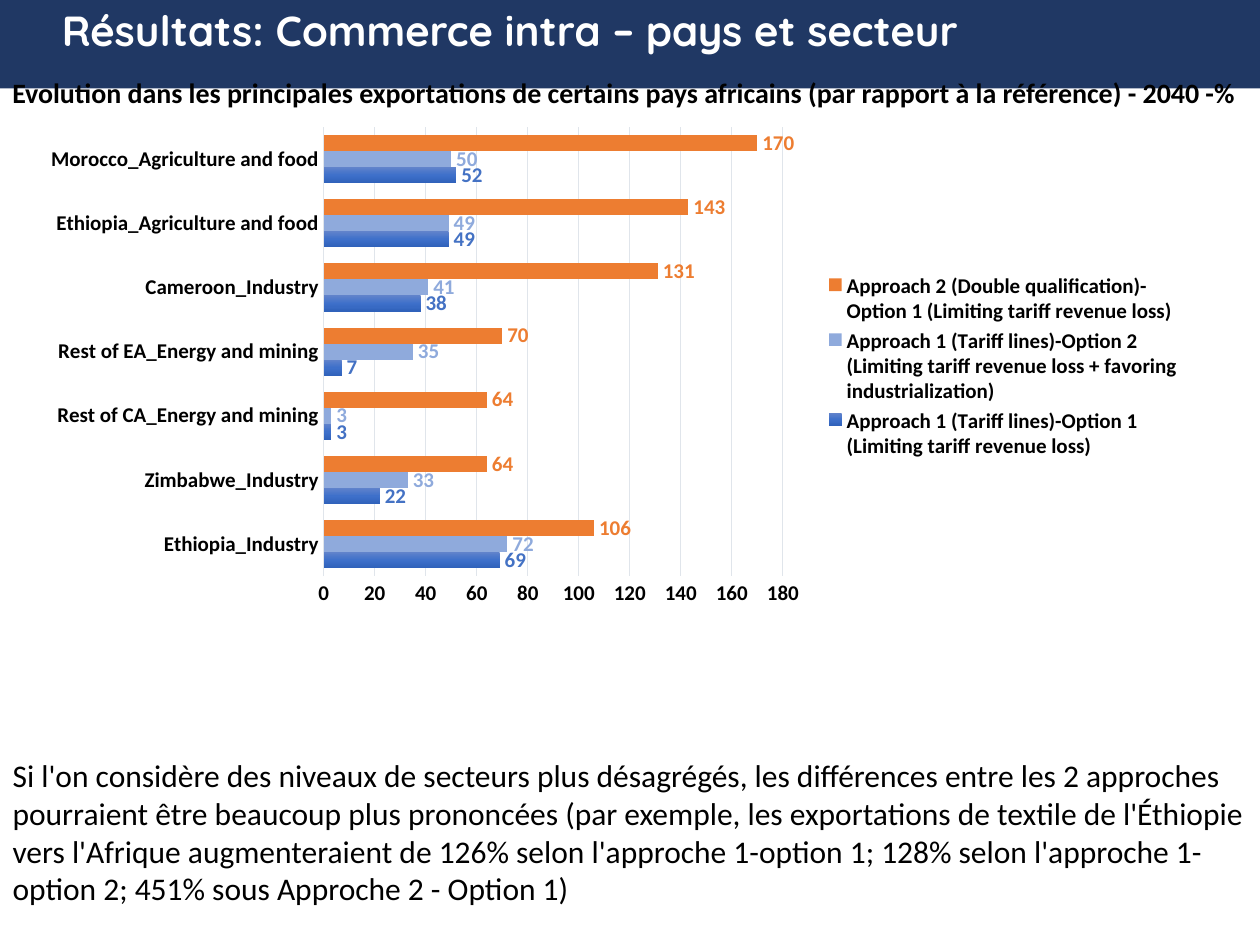
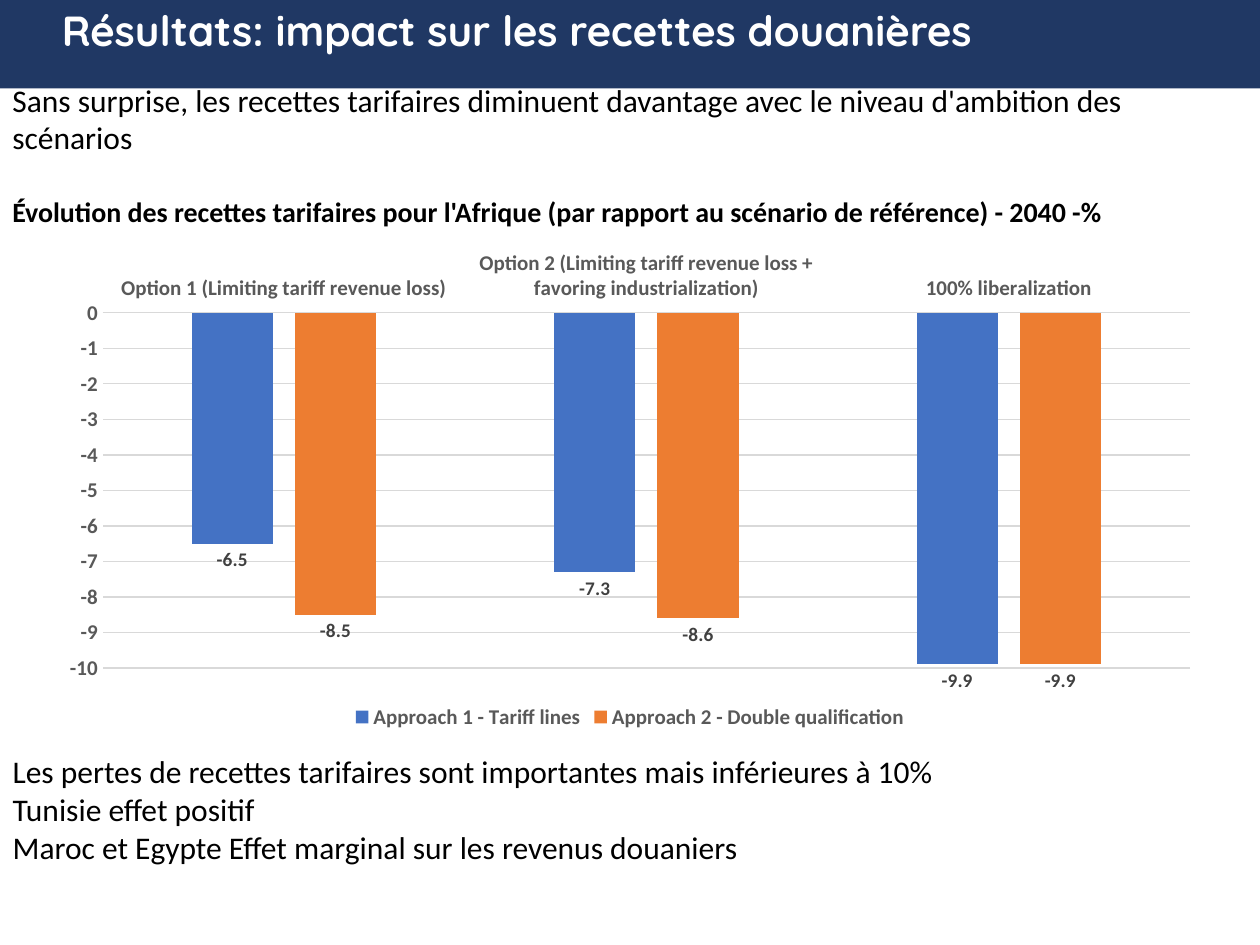
from copy import deepcopy
from dataclasses import dataclass

from lxml import etree
from pptx import Presentation
from pptx.chart.data import CategoryChartData
from pptx.dml.color import RGBColor
from pptx.enum.chart import (XL_CHART_TYPE, XL_LABEL_POSITION, XL_LEGEND_POSITION,
                             XL_TICK_LABEL_POSITION, XL_TICK_MARK)
from pptx.enum.text import MSO_ANCHOR, MSO_AUTO_SIZE, PP_ALIGN
from pptx.oxml.ns import qn
from pptx.util import Inches, Pt

BAR, COLUMN = XL_CHART_TYPE.BAR_CLUSTERED, XL_CHART_TYPE.COLUMN_CLUSTERED
RIGHT, BOTTOM = XL_LEGEND_POSITION.RIGHT, XL_LEGEND_POSITION.BOTTOM
OUTSIDE, HIGH = XL_LABEL_POSITION.OUTSIDE_END, XL_TICK_LABEL_POSITION.HIGH
NO_TICK = XL_TICK_MARK.NONE
LEFT = PP_ALIGN.LEFT
TOP, MIDDLE = MSO_ANCHOR.TOP, MSO_ANCHOR.MIDDLE
GROW = MSO_AUTO_SIZE.SHAPE_TO_FIT_TEXT
WIDE, HIGH_IN = 10, 7.5


@dataclass(frozen=True)
class Theme:
    navy: str = "203864"
    white: str = "FFFFFF"
    black: str = "000000"
    blue: str = "4472C4"
    pale: str = "8FAADC"
    orange: str = "ED7D31"
    dark: str = "404040"
    grey: str = "595959"
    rule: str = "D9D9D9"
    mist: str = "E0E5EB"
    shade: tuple = ((0, "6183CB"), (0.5, "3E70CA"), (1, "3062BB"))
    face: str = "Calibri"
    display: str = "Quicksand"
    title: int = 24
    body: int = 18
    head: int = 16
    axis: int = 12
    small: int = 11


T = Theme()
HEAD = dict(size=T.head, bold=True)

# Text entries are (text, format); series are (name, values, fill, label colour).
SLIDES = [
    dict(
        title="Résultats: Commerce intra – pays et secteur",
        intro=[("Evolution dans les principales exportations de certains pays africains "
                "(par rapport à la référence) - 2040 -%", HEAD)],
        intro_at=(0, 0.55, WIDE, 0.37),
        chart=dict(
            kind=BAR, at=(0.22, 0.93, 9.26, 3.96), legend=RIGHT, gap=100, overlap=0,
            ink=T.black, grid=T.mist, size=T.axis, labels="#,##0", ticks="General",
            cats=["Ethiopia_Industry", "Zimbabwe_Industry", "Rest of CA_Energy and mining",
                  "Rest of EA_Energy and mining", "Cameroon_Industry",
                  "Ethiopia_Agriculture and food", "Morocco_Agriculture and food"],
            series=[
                ("Approach 1 (Tariff lines)-Option 1 (Limiting tariff revenue loss)",
                 (69, 22, 3, 7, 38, 49, 52), T.shade, T.blue),
                ("Approach 1 (Tariff lines)-Option 2 (Limiting tariff revenue loss + "
                 "favoring industrialization)",
                 (72, 33, 3, 35, 41, 49, 50), T.pale, T.pale),
                ("Approach 2 (Double qualification)-Option 1 (Limiting tariff revenue loss)",
                 (106, 64, 64, 70, 131, 143, 170), T.orange, T.orange),
            ]),
        notes=["Si l'on considère des niveaux de secteurs plus désagrégés, les différences "
               "entre les 2 approches pourraient être beaucoup plus prononcées (par exemple, "
               "les exportations de textile de l'Éthiopie vers l'Afrique augmenteraient de "
               "126% selon l'approche 1-option 1; 128% selon l'approche 1-option 2; "
               "451% sous Approche 2 - Option 1)"],
        notes_at=(0, 5.95, WIDE, 1.31)),
    dict(
        title="Résultats: impact sur les recettes douanières",
        intro=[("Sans surprise, les recettes tarifaires diminuent davantage avec le niveau "
                "d'ambition des scénarios", {}),
               ("Évolution des recettes tarifaires pour l'Afrique (par rapport au scénario "
                "de référence) - 2040 -%", dict(HEAD, before=22))],
        intro_at=(0, 0.59, WIDE, 1.31),
        chart=dict(
            kind=COLUMN, at=(0.37, 1.91, 9.26, 3.92), legend=BOTTOM, gap=219, overlap=-27,
            ink=T.grey, grid=T.rule, size=T.small, labels="0.0", ticks="0", span=(-10, 0),
            cats=["Option 1 (Limiting tariff revenue loss)",
                  "Option 2 (Limiting tariff revenue loss + favoring industrialization)",
                  "100% liberalization"],
            series=[
                ("Approach 1 - Tariff lines", (-6.5, -7.3, -9.9), T.blue, T.dark),
                ("Approach 2 - Double qualification", (-8.5, -8.6, -9.9), T.orange, T.dark),
            ]),
        notes=["Les pertes de recettes tarifaires sont importantes mais inférieures à 10%",
               "Tunisie effet positif",
               "Maroc et Egypte Effet marginal sur les revenus douaniers"],
        notes_at=(0, 5.92, WIDE, 1.01)),
]


def rgb(code):
    return RGBColor.from_string(code)


def style(font, size=T.body, color=T.black, bold=False, face=T.face):
    font.size, font.bold, font.name = Pt(size), bold, face
    font.color.rgb = rgb(color)


def place(shape, at):
    shape.left, shape.top, shape.width, shape.height = map(Inches, at)


def write(frame, items, anchor=TOP, indent=0):
    """Fill a frame with unbulleted paragraphs given as (text, format)."""
    frame.word_wrap, frame.auto_size = True, GROW
    frame.vertical_anchor = anchor
    for n, (text, form) in enumerate(items):
        form = dict(form)
        para = frame.add_paragraph() if n else frame.paragraphs[0]
        para.alignment = LEFT
        para.space_before = Pt(form.pop("before", 0))
        props = para._p.get_or_add_pPr()
        props.set("marL", str(Inches(indent)))
        props.set("indent", "0")
        etree.SubElement(props, qn("a:buNone"))
        run = para.add_run()
        run.text = text
        style(run.font, **form)


def add_band(title, text):
    """Turn the title placeholder into the rounded band at the top."""
    place(title, (0, -0.1, WIDE, 0.67))
    shape = etree.SubElement(title._element.spPr, qn("a:prstGeom"), prst="roundRect")
    etree.SubElement(shape, qn("a:avLst"))
    title.fill.solid()
    title.fill.fore_color.rgb = rgb(T.navy)
    frame = title.text_frame
    frame.margin_top = frame.margin_bottom = Inches(0.1)
    form = dict(size=T.title, color=T.white, bold=True, face=T.display)
    write(frame, [(text, form)], anchor=MIDDLE, indent=0.39)


def paint(series, color):
    """Fill a series with one colour, or with (position, colour) stops."""
    fill = series.format.fill
    if isinstance(color, str):
        fill.solid()
        fill.fore_color.rgb = rgb(color)
        return
    fill.gradient()
    fill.gradient_angle = 270
    stops = next(series._element.iter(qn("a:gsLst")))
    while len(stops) < len(color):
        stops.append(deepcopy(stops[0]))
    for stop, (spot, code) in zip(fill.gradient_stops, color):
        stop.position, stop.color.rgb = spot, rgb(code)


def rule(line, color):
    line.width = Pt(0.75)
    line.color.rgb = rgb(color)


def add_chart(slide, kind, at, legend, gap, overlap, ink, grid, size,
              labels, ticks, cats, series, span=None):
    data = CategoryChartData()
    data.categories = cats
    for name, values, *_ in series:
        data.add_series(name, values)
    chart = slide.shapes.add_chart(kind, *map(Inches, at), data).chart
    chart.has_title = False
    style(chart.font, size=size, bold=True)
    chart.has_legend = True
    chart.legend.position = legend
    chart.legend.include_in_layout = False
    style(chart.legend.font, size=T.axis, color=ink, bold=True)

    cat, val = chart.category_axis, chart.value_axis
    for axis in (cat, val):
        axis.major_tick_mark = axis.minor_tick_mark = NO_TICK
        style(axis.tick_labels.font, size=T.axis, color=ink, bold=True)
    rule(cat.format.line, grid)
    val.format.line.fill.background()
    val.has_major_gridlines = True
    rule(val.major_gridlines.format.line, grid)
    val.tick_labels.number_format = ticks
    val.tick_labels.number_format_is_linked = False
    if span:
        val.minimum_scale, val.maximum_scale = span
        cat.tick_label_position = HIGH

    plot = chart.plots[0]
    plot.gap_width, plot.overlap = gap, overlap
    plot.vary_by_categories = False
    for bars, (_, _, fill, tint) in zip(plot.series, series):
        bars.invert_if_negative = False
        paint(bars, fill)
        tags = bars.data_labels
        tags.show_value, tags.position = True, OUTSIDE
        tags.number_format, tags.number_format_is_linked = labels, False
        style(tags.font, size=size, color=tint, bold=True)


def main():
    deck = Presentation()
    deck.slide_width, deck.slide_height = Inches(WIDE), Inches(HIGH_IN)
    for page in SLIDES:
        slide = deck.slides.add_slide(deck.slide_layouts[1])
        add_band(slide.shapes.title, page["title"])
        intro = slide.shapes.add_textbox(*map(Inches, page["intro_at"]))
        write(intro.text_frame, page["intro"])
        add_chart(slide, **page["chart"])
        notes = slide.placeholders[1]
        place(notes, page["notes_at"])
        write(notes.text_frame, [(text, {}) for text in page["notes"]])
    deck.save("out.pptx")


if __name__ == "__main__":
    main()
